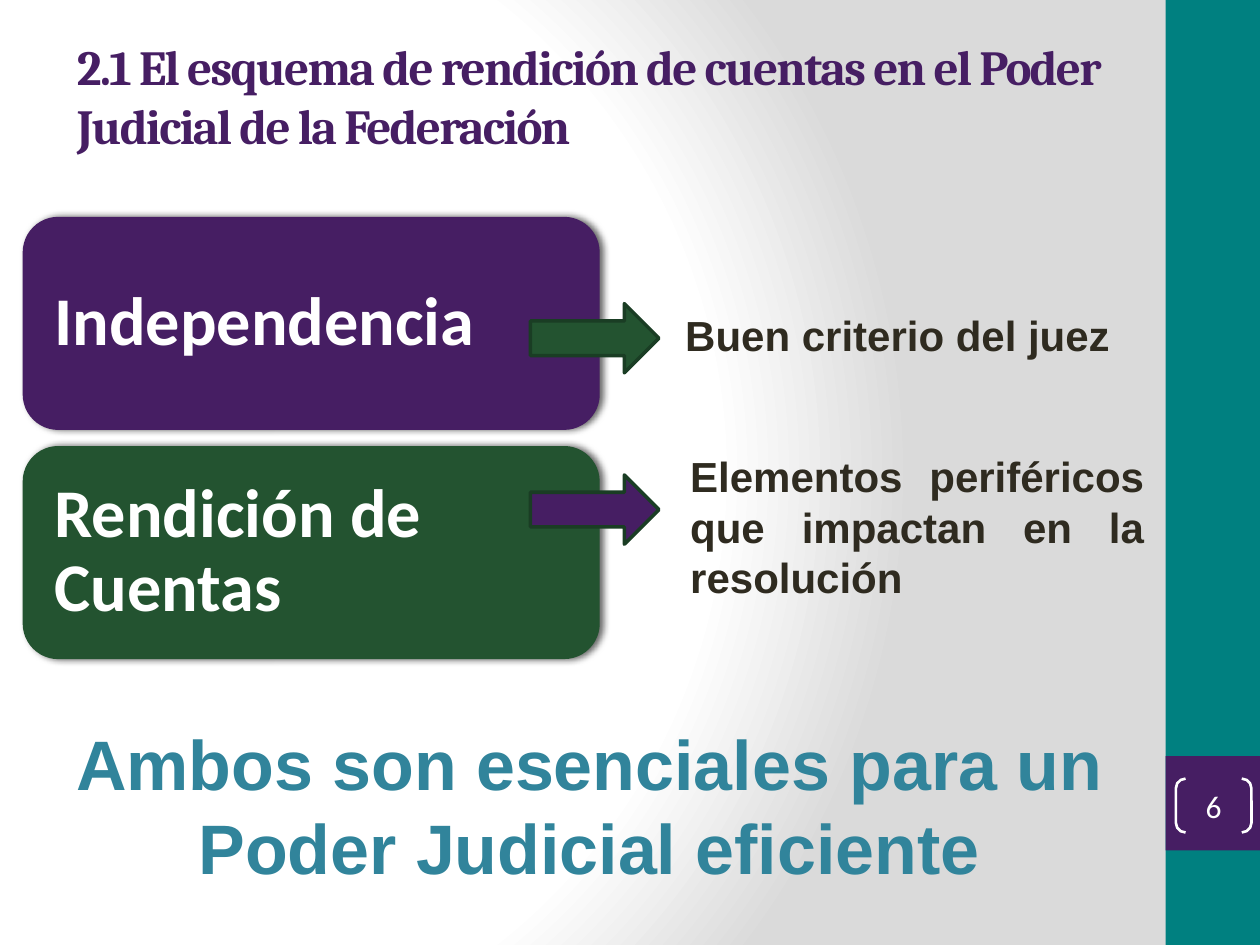
from pptx import Presentation, oxml, util as u
from pptx.dml import color
from pptx.enum import shapes, text
from pptx.oxml import ns

WIDTH, HEIGHT = 10, 7.5
PURPLE, GREEN, TEAL, WHITE = "461E63", "235330", "008080", "FFFFFF"
INK, BLUE, EDGE = "2F2B20", "31849B", "1A3D24"
SHAPE, ALIGN = shapes.MSO_SHAPE, text.PP_ALIGN


def rgb(value):
    """Turn a hex string into a colour."""
    return color.RGBColor.from_string(value)


def share(left, top, width, height):
    """Turn percentages of the slide's size into a box of lengths."""
    return [u.Inches(part * side / 100) for part, side in
            zip((left, top, width, height), (WIDTH, HEIGHT) * 2)]


def set_values(target, values):
    """Set attributes of an object from a dict."""
    for name, value in values.items():
        setattr(target, name, value)


def write(shape, wording, font, ink, align=ALIGN.LEFT, frame=None, spacing=None):
    """Write one formatted paragraph in a shape and return its run."""
    set_values(shape.text_frame, {"word_wrap": True, **(frame or {})})
    paragraph = shape.text_frame.paragraphs[0]
    set_values(paragraph, {"alignment": align, "line_spacing": spacing})
    run = paragraph.add_run()
    run.text = wording
    set_values(run.font, font)
    run.font.color.rgb = rgb(ink)
    return run


def inset(length, **values):
    """Give frame values with the same margin on every side."""
    sides = ("left", "top", "right", "bottom")
    margins = {f"margin_{side}": u.Inches(length) for side in sides}
    return {**margins, "vertical_anchor": text.MSO_ANCHOR.MIDDLE, **values}


def add_shape(slide, kind, box, fill=None, line=None, weight=1.5):
    """Add a preset shape without shadow."""
    shape = slide.shapes.add_shape(kind, *box)
    shape.shadow.inherit = False
    if fill:
        shape.fill.solid()
        shape.fill.fore_color.rgb = rgb(fill)
    else:
        shape.fill.background()
    if line:
        shape.line.color.rgb = rgb(line)
        shape.line.width = u.Pt(weight)
    else:
        shape.line.fill.background()
    return shape


def add_background(slide):
    """Fill the slide with a radial gradient from white to grey."""
    stops = "".join(
        f'<a:gs pos="{place * 1000}"><a:srgbClr val="{value}"/></a:gs>'
        for place, value in ((0, WHITE), (75, WHITE), (100, "DADADA")))
    slide.element.cSld.insert(0, oxml.parse_xml(
        f'<p:bg {ns.nsdecls("p", "a")}><p:bgPr><a:gradFill rotWithShape="1">'
        f'<a:gsLst>{stops}</a:gsLst><a:path path="circle">'
        '<a:fillToRect l="20000" t="50000" r="100000" b="50000"/></a:path>'
        '</a:gradFill><a:effectLst/></p:bgPr></p:bg>'))


def add_sidebar(slide, box, number):
    """Draw the side band with its bracketed page number."""
    left, top, width, height = box
    add_shape(slide, SHAPE.RECTANGLE, box, TEAL)
    tile_top = top + int(height * 0.8)
    add_shape(slide, SHAPE.RECTANGLE, (left, tile_top, width, width), PURPLE)
    bracket = add_shape(
        slide, SHAPE.DOUBLE_BRACKET,
        (left + int(width * 0.11), tile_top + int(width * 0.24),
         int(width * 0.8), int(width * 0.57)), line=WHITE)
    bracket.adjustments[0] = 0.18
    write(bracket, number, {"name": "Calibri", "size": u.Pt(18)}, WHITE,
          ALIGN.CENTER, inset(0))


def add_title(slide, box, wording):
    """Place and format the title placeholder."""
    title = slide.shapes.title
    set_values(title, dict(zip(("left", "top", "width", "height"), box)))
    run = write(title, wording,
                {"name": "Cambria", "size": u.Pt(28), "bold": True}, PURPLE,
                frame={"vertical_anchor": text.MSO_ANCHOR.MIDDLE,
                       "auto_size": text.MSO_AUTO_SIZE.NONE})
    run.font._element.set("spc", "-100")


def add_card(slide, box, wording, fill):
    """Draw a rounded card with a soft shadow and a large label."""
    card = add_shape(slide, SHAPE.ROUNDED_RECTANGLE, box, fill)
    effects = card.element.spPr.find(ns.qn("a:effectLst"))
    effects.append(oxml.parse_xml(
        f'<a:outerShdw {ns.nsdecls("a")} blurRad="{u.Pt(4)}" dist="{u.Pt(2)}" '
        'dir="0" rotWithShape="0"><a:srgbClr val="000000">'
        '<a:alpha val="60000"/></a:srgbClr></a:outerShdw>'))
    write(card, wording, {"name": "Calibri", "size": u.Pt(39), "bold": True},
          WHITE, frame=inset(0.16, margin_left=u.Inches(0.17)), spacing=0.9)


def add_note(slide, box, wording, size, ink, align):
    """Add a bold text box that grows with its text."""
    write(slide.shapes.add_textbox(*box), wording,
          {"name": "Arial", "size": u.Pt(size), "bold": True}, ink, align,
          {"auto_size": text.MSO_AUTO_SIZE.SHAPE_TO_FIT_TEXT})


def main():
    """Build the slide and save it."""
    presentation = Presentation()
    set_values(presentation, {"slide_width": u.Inches(WIDTH),
                              "slide_height": u.Inches(HEIGHT)})
    slide = presentation.slides.add_slide(presentation.slide_layouts[5])
    add_background(slide)
    add_sidebar(slide, share(92.5, 0, 7.5, 100), "6")
    add_title(slide, share(5.1, 1.73, 83.3, 16.67),
              "2.1 El esquema de rendición de cuentas en el Poder "
              "Judicial de la Federación")
    cards = (("Independencia", PURPLE), ("Rendición de Cuentas", GREEN))
    for row, (wording, fill) in enumerate(cards):
        add_card(slide, share(1.8, 22.95 + row * 24.25, 45.8, 22.55),
                 wording, fill)
    add_note(slide, share(4.2, 75.6, 85.1, 19.33),
             "Ambos son esenciales para un Poder Judicial eficiente",
             40, BLUE, ALIGN.CENTER)
    for row, fill in enumerate((GREEN, PURPLE)):
        add_shape(slide, SHAPE.RIGHT_ARROW,
                  share(42.1, 32.13 + row * 18.13, 10.2, 7.33), fill, EDGE, 2)
    add_note(slide, share(53.4, 32.13, 38, 6.67), "Buen criterio del juez",
             24, INK, ALIGN.LEFT)
    add_note(slide, share(53.8, 47.07, 38, 17.47),
             "Elementos periféricos que impactan en la resolución",
             24, INK, ALIGN.JUSTIFY)
    presentation.save("out.pptx")


if __name__ == "__main__":
    main()
